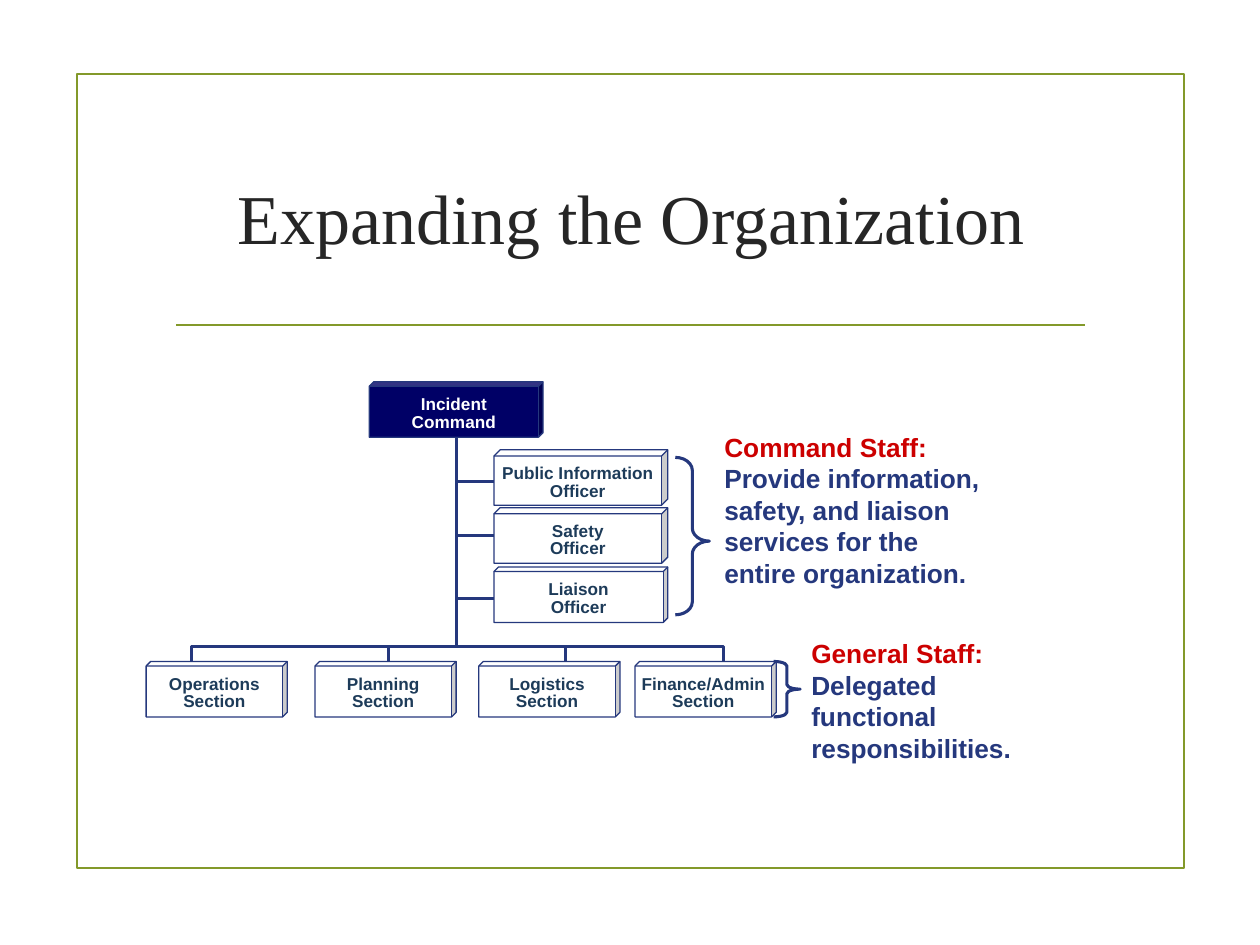
from dataclasses import dataclass

from lxml import etree
from pptx import Presentation
from pptx.dml.color import RGBColor
from pptx.enum.shapes import MSO_CONNECTOR as Connector, MSO_SHAPE as Shape
from pptx.enum.text import MSO_ANCHOR as Anchor, MSO_AUTO_SIZE as AutoSize, PP_ALIGN as Align
from pptx.oxml.ns import qn
from pptx.util import Inches, Pt


@dataclass(frozen=True)
class Theme:
    olive: str = "83992A"
    navy: str = "25387D"
    command: str = "000066"
    label: str = "1D3B59"
    red: str = "CC0000"
    white: str = "FFFFFF"
    title: str = "262626"
    title_font: str = "Times New Roman"
    body_font: str = "Arial"
    title_size: float = 40
    note_size: float = 15
    label_size: float = 9.8
    rule_width: float = 1.25
    link_width: float = 1.75
    box_width: float = 0.75


@dataclass(frozen=True)
class Unit:
    """One box of the organization chart."""
    label: str
    left: float
    top: float
    width: float
    depth: float = 0.083
    fill: str = Theme.white
    color: str = Theme.label


@dataclass(frozen=True)
class Brace:
    left: float
    top: float
    width: float
    height: float
    curve: float
    point: float


@dataclass(frozen=True)
class Note:
    heading: str
    body: str
    left: float
    top: float
    width: float
    height: float


THEME = Theme()
BOX_HEIGHT = 0.44
SECTION_TOP = 5.25
TRUNK_X = 3.62
BUS_Y = 5.13

COMMAND = Unit("Incident\nCommand", 2.93, 3.03, 1.38, fill=THEME.command, color=THEME.white)
OFFICERS = [
    Unit(f"{name}\nOfficer", 3.92, top, 1.38, depth)
    for name, top, depth in [
        ("Public Information", 3.57, 0.113), ("Safety", 4.03, 0.11), ("Liaison", 4.5, 0.083)]
]
SECTIONS = [
    Unit(f"{name}\nSection", left, SECTION_TOP, 1.12)
    for name, left in [
        ("Operations", 1.16), ("Planning", 2.5), ("Logistics", 3.8), ("Finance/Admin", 5.04)]
]
BRACES = [
    Brace(5.36, 3.63, 0.27, 1.25, 0.381, 0.532),
    Brace(6.14, SECTION_TOP, 0.21, BOX_HEIGHT, 0.173, 0.5),
]
NOTES = [
    Note("Command Staff:  ",
         "Provide information, safety, and liaison services for the entire organization.",
         5.65, 3.37, 2.25, 1.36),
    Note("General Staff: ", "Delegated functional responsibilities.", 6.34, 5.01, 1.88, 1.31),
]


def style_font(font, name: str, size: float, color: str, bold: bool = False) -> None:
    font.name, font.size, font.bold = name, Pt(size), bold
    font.color.rgb = RGBColor.from_string(color)


def style_line(line, color: str, width: float) -> None:
    line.color.rgb = RGBColor.from_string(color)
    line.width = Pt(width)


def draw_shape(page, kind, left: float, top: float, width: float, height: float,
               line_color: str, line_width: float):
    """Add an unfilled outline without shadow."""
    shape = page.shapes.add_shape(kind, Inches(left), Inches(top), Inches(width), Inches(height))
    shape.shadow.inherit = False
    shape.fill.background()
    style_line(shape.line, line_color, line_width)
    return shape


def draw_link(page, x1: float, y1: float, x2: float, y2: float, kind=Connector.STRAIGHT,
              color: str = THEME.navy, width: float = THEME.link_width):
    link = page.shapes.add_connector(kind, Inches(x1), Inches(y1), Inches(x2), Inches(y2))
    style_line(link.line, color, width)
    etree.SubElement(link._element.spPr, qn("a:effectLst"))
    return link


def draw_bus(page) -> None:
    """Elbow over the outer sections: a quarter turn puts its long side on top."""
    bus = draw_link(page, 3.61, 3.22, 3.65, 7.44, Connector.ELBOW)
    properties = bus._element.spPr
    properties.find(qn("a:xfrm")).set("rot", str(270 * 60000))
    guides = properties.find(qn("a:prstGeom")).find(qn("a:avLst"))
    bend = (5.35 - BUS_Y) / 0.04
    etree.SubElement(guides, qn("a:gd"), name="adj1", fmla=f"val {round(bend * 100000)}")


def draw_unit(page, unit: Unit) -> None:
    box = draw_shape(page, Shape.CUBE, unit.left, unit.top, unit.width, BOX_HEIGHT,
                     THEME.navy, THEME.box_width)
    box.adjustments[0] = unit.depth
    box.fill.solid()
    box.fill.fore_color.rgb = RGBColor.from_string(unit.fill)
    frame = box.text_frame
    frame.word_wrap = False
    frame.vertical_anchor = Anchor.MIDDLE
    frame.margin_left = frame.margin_right = Inches(0.1)
    frame.margin_top, frame.margin_bottom = Inches(0.05), Inches(0.01)
    frame.text = unit.label
    for para in frame.paragraphs:
        para.alignment = Align.CENTER
        para.line_spacing = 0.85
        for span in para.runs:
            style_font(span.font, THEME.body_font, THEME.label_size, unit.color, True)


def draw_brace(page, brace: Brace) -> None:
    shape = draw_shape(page, Shape.RIGHT_BRACE, brace.left, brace.top, brace.width, brace.height,
                       THEME.navy, THEME.link_width)
    shape.adjustments[0], shape.adjustments[1] = brace.curve, brace.point


def draw_note(page, note: Note) -> None:
    box = page.shapes.add_textbox(Inches(note.left), Inches(note.top),
                                  Inches(note.width), Inches(note.height))
    frame = box.text_frame
    frame.word_wrap = True
    frame.auto_size = AutoSize.SHAPE_TO_FIT_TEXT
    para = frame.paragraphs[0]
    para.text = note.heading
    para.add_run().text = note.body
    for span, color in zip(para.runs, (THEME.red, THEME.navy)):
        style_font(span.font, THEME.body_font, THEME.note_size, color, True)


def draw_title(page, text: str) -> None:
    title = page.shapes.title
    title.left, title.top = Inches(1.29), Inches(1)
    title.width, title.height = Inches(7.44), Inches(1.43)
    frame = title.text_frame
    frame.text = text
    frame.auto_size = AutoSize.NONE
    frame.vertical_anchor = Anchor.MIDDLE
    para = frame.paragraphs[0]
    para.alignment = Align.CENTER
    style_font(para.runs[0].font, THEME.title_font, THEME.title_size, THEME.title)


def main() -> None:
    deck = Presentation()
    deck.slide_width, deck.slide_height = Inches(10), Inches(7.5)
    page = deck.slides.add_slide(deck.slide_layouts[5])

    # Frame, title and rule
    draw_shape(page, Shape.RECTANGLE, 0.61, 0.59, 8.79, 6.3, THEME.olive, THEME.rule_width)
    draw_link(page, 1.4, 2.58, 8.61, 2.58, color=THEME.olive, width=THEME.rule_width)
    draw_title(page, "Expanding the Organization")

    # Links run behind the boxes
    draw_link(page, TRUNK_X, 3.4, TRUNK_X, BUS_Y)
    for y in (3.82, 4.25, 4.75):
        draw_link(page, TRUNK_X, y, 4.5, y)
    for x in (3.08, 4.49):
        draw_link(page, x, BUS_Y, x, 5.33)
    draw_bus(page)

    # Boxes, lowest officer first so that each overlaps the one below
    for unit in [COMMAND, *reversed(OFFICERS), *SECTIONS]:
        draw_unit(page, unit)

    # Braces and their explanations
    for brace in BRACES:
        draw_brace(page, brace)
    for note in NOTES:
        draw_note(page, note)

    deck.save("out.pptx")


if __name__ == "__main__":
    main()
